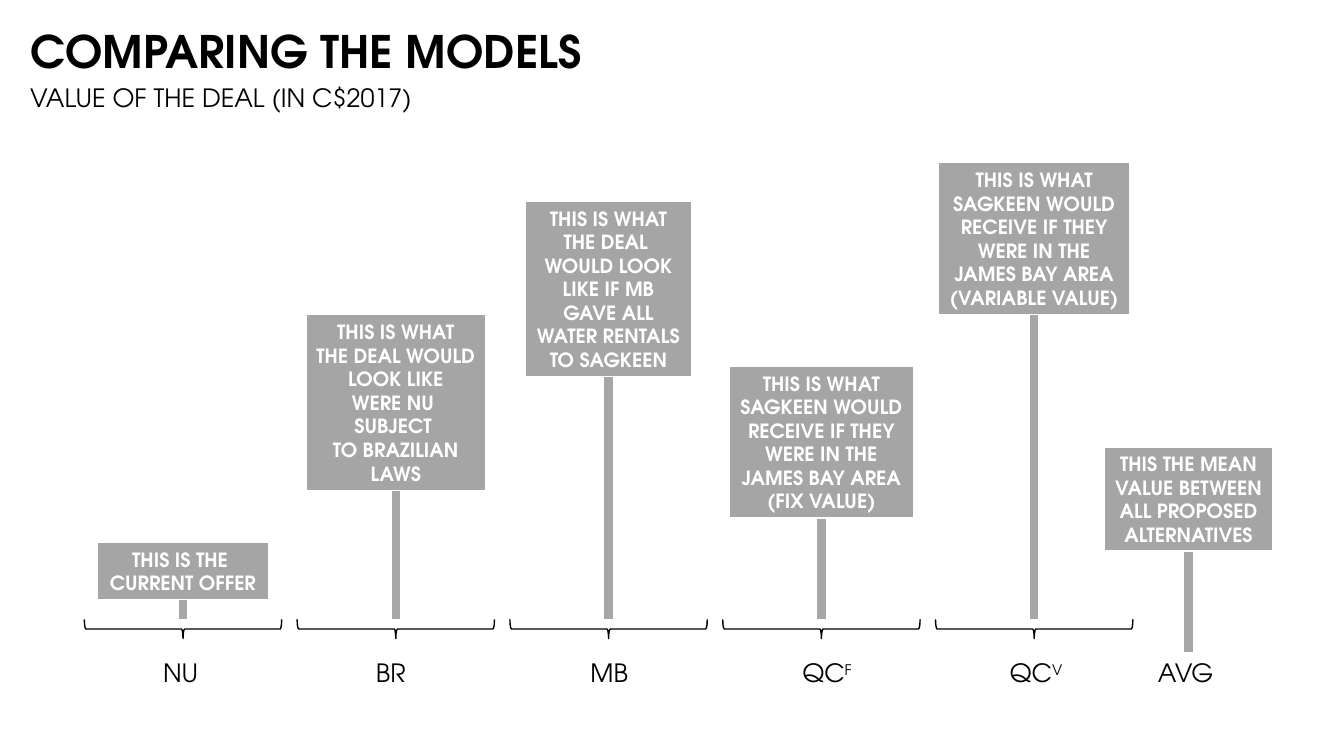
from lxml.etree import SubElement
from pptx import Presentation
from pptx.dml.color import RGBColor
from pptx.enum.shapes import MSO_CONNECTOR, MSO_SHAPE
from pptx.enum.text import MSO_ANCHOR, MSO_AUTO_SIZE, PP_ALIGN
from pptx.oxml.ns import qn
from pptx.util import Pt

FONT = "TeX Gyre Adventor"
COLORS = {"ink": "000000", "box": "A5A5A5", "stem": "A6A6A6", "white": "FFFFFF"}


def color(name):
    return RGBColor.from_string(COLORS[name])


def write(shape, text, size, ink="ink", bold=False, align=PP_ALIGN.LEFT,
          anchor=MSO_ANCHOR.TOP):
    """Fill a shape with unwrapped text in one style."""
    frame = shape.text_frame
    frame.text = text
    frame.word_wrap = False
    frame.auto_size = MSO_AUTO_SIZE.NONE
    frame.vertical_anchor = anchor
    for para in frame.paragraphs:
        para.alignment = align
        for run in para.runs:
            run.font.name = FONT
            run.font.size = Pt(size)
            run.font.bold = bold
            run.font.color.rgb = color(ink)


deck = Presentation()
deck.slide_width, deck.slide_height = Pt(960), Pt(540)
slide = deck.slides.add_slide(deck.slide_layouts[5])
shapes = slide.shapes

title = shapes.title
title.left, title.top, title.width, title.height = Pt(14.4), Pt(13), Pt(414), Pt(46)
write(title, "COMPARING THE MODELS", 32, bold=True)
sub = shapes.add_textbox(Pt(14.4), Pt(55.5), Pt(300), Pt(29))
write(sub, "VALUE OF THE DEAL (IN C$2017)", 18)

# Braces share one pitch
FIRST, PITCH = 130.7, 152
BRACE_W, BRACE_H, BRACE_Y = 13.7, 141, 449.3
mids = [FIRST + PITCH * i for i in range(5)]
for mid in mids:
    brace = shapes.add_shape(MSO_SHAPE.RIGHT_BRACE, Pt(mid - BRACE_W / 2),
                             Pt(BRACE_Y - BRACE_H / 2), Pt(BRACE_W), Pt(BRACE_H))
    brace.rotation = 90
    brace.shadow.inherit = False
    brace.fill.background()
    brace.line.color.rgb = color("ink")
    brace.line.width = Pt(1)

# Label, superscript, label left, label width, box top, box width, stem end, text
JAMES = ("THIS IS WHAT\nSAGKEEN WOULD\nRECEIVE IF THEY\nWERE IN THE\n"
         "JAMES BAY AREA\n")
models = [
    ("NU", "", 109.4, 44, 387.4, 122.4, 442, "THIS IS THE \nCURRENT OFFER"),
    ("BR", "", 261.4, 36, 224.6, 129, 442,
     "THIS IS WHAT\nTHE DEAL WOULD\nLOOK LIKE\nWERE NU \nSUBJECT \n"
     "TO BRAZILIAN\nLAWS"),
    ("MB", "", 414.7, 42, 143.3, 119, 442,
     "THIS IS WHAT\nTHE DEAL \nWOULD LOOK\nLIKE IF MB\nGAVE ALL\n"
     "WATER RENTALS\nTO SAGKEEN"),
    ("QC", "F", 566, 51, 261.4, 132, 442, JAMES + "(FIX VALUE)"),
    ("QC", "V", 714.2, 53.3, 116, 137, 442, JAMES + "(VARIABLE VALUE)"),
    ("AVG", "", 820, 57, 319, 121, 466,
     "THIS THE MEAN\nVALUE BETWEEN\nALL PROPOSED\nALTERNATIVES"),
]
for mid, model in zip(mids + [849], models):
    name, mark, left, wide, top, width, end, text = model
    label = shapes.add_textbox(Pt(left), Pt(466), Pt(wide), Pt(29))
    write(label, name, 18)
    if mark:
        run = label.text_frame.paragraphs[0].add_run()
        run.text = mark
        run.font.name = FONT
        run.font.size = Pt(18)
        run.font.color.rgb = color("ink")
        run.font._element.set("baseline", "30000")

    height = 7 + 17 * len(text.split("\n"))
    box = shapes.add_shape(MSO_SHAPE.RECTANGLE, Pt(mid - width / 2), Pt(top),
                           Pt(width), Pt(height))
    box.shadow.inherit = False
    box.fill.solid()
    box.fill.fore_color.rgb = color("box")
    box.line.color.rgb = color("white")
    box.line.width = Pt(1.5)
    write(box, text, 14, "white", True, PP_ALIGN.CENTER, MSO_ANCHOR.MIDDLE)

    stem = shapes.add_connector(MSO_CONNECTOR.STRAIGHT, Pt(mid), Pt(top + height),
                                Pt(mid), Pt(end))
    stem.begin_connect(box, 2)
    stem.line.color.rgb = color("stem")
    stem.line.width = Pt(6)
    SubElement(stem._element.spPr, qn("a:effectLst"))

deck.save("out.pptx")
